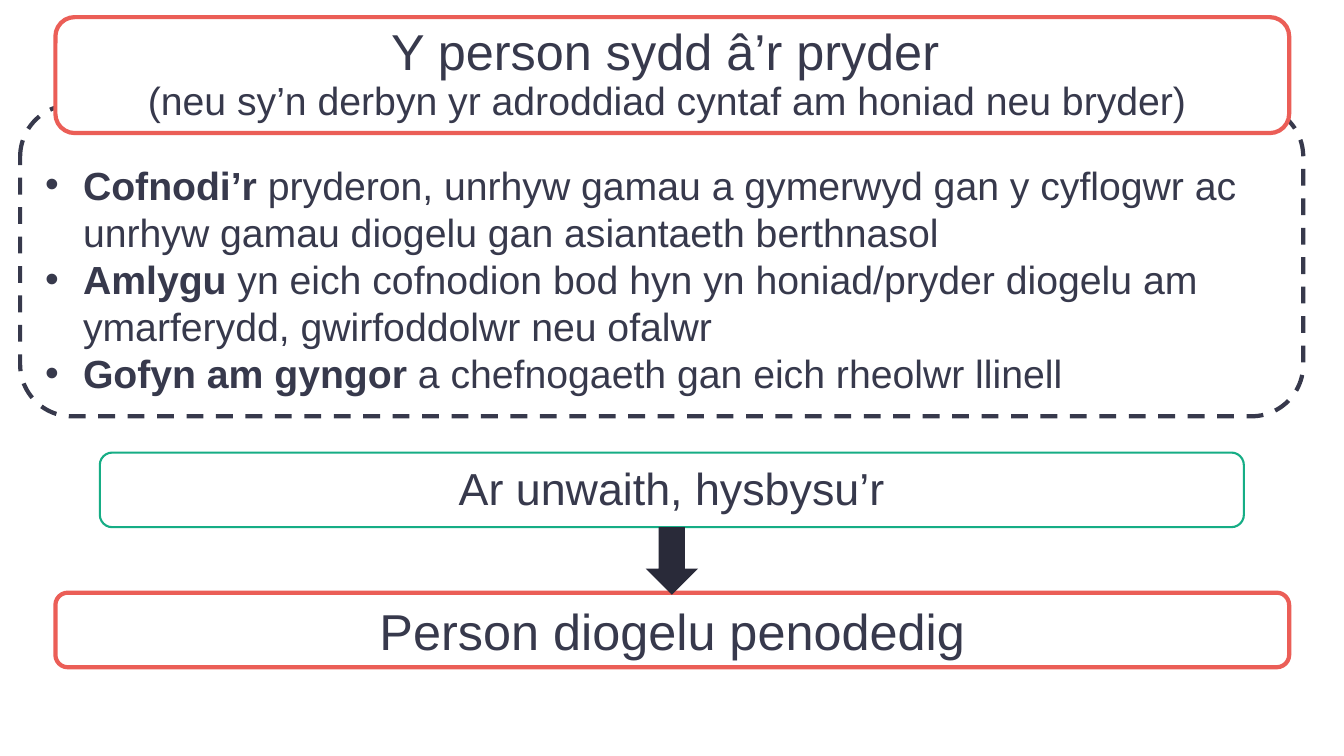
from lxml import etree
from pptx import Presentation
from pptx.dml.color import RGBColor
from pptx.enum.dml import MSO_LINE
from pptx.enum.shapes import MSO_SHAPE
from pptx.enum.text import MSO_ANCHOR, PP_ALIGN
from pptx.oxml.ns import qn
from pptx.util import Pt

ROUNDED, DOWN_ARROW = MSO_SHAPE.ROUNDED_RECTANGLE, MSO_SHAPE.DOWN_ARROW
TOP, MIDDLE, BOTTOM = MSO_ANCHOR.TOP, MSO_ANCHOR.MIDDLE, MSO_ANCHOR.BOTTOM
LEFT, CENTER = PP_ALIGN.LEFT, PP_ALIGN.CENTER
DASH = MSO_LINE.DASH

COLORS = {"ink": "37394C", "red": "EB5E57", "green": "16AD85",
          "arrow": "292A39", "white": "FFFFFF"}

WIDTH, HEIGHT = 960, 540
PERSON_BOX = (39.6, 12.24, 881.28, 82.8)
DUTIES_BOX = (14.4, 74.88, 916.56, 222.48)
INFORM_BOX = (71.28, 323.28, 817.2, 53.28)
LEAD_BOX = (39.6, 423.36, 881.28, 53.28)
ARROW_WIDTH, ARROW_OVERLAP = 37.44, 1.5
BULLET_INDENT = 27

DUTIES = [
    ("Cofnodi’r ", "pryderon, unrhyw gamau a gymerwyd gan y cyflogwr ac "
                   "unrhyw gamau diogelu gan asiantaeth berthnasol"),
    ("Amlygu ", "yn eich cofnodion bod hyn yn honiad/pryder diogelu am "
                "ymarferydd, gwirfoddolwr neu ofalwr"),
    ("Gofyn am gyngor ", "a chefnogaeth gan eich rheolwr llinell"),
]


def color(name):
    """Return the palette colour of that name."""
    return RGBColor.from_string(COLORS[name])


def add_shape(slide, kind, box, fill=None, line=None, width=3, dash=None):
    """Draw a preset shape in a box, without shadow."""
    shape = slide.shapes.add_shape(kind, *(Pt(length) for length in box))
    shape.shadow.inherit = False
    if fill:
        shape.fill.solid()
        shape.fill.fore_color.rgb = color(fill)
    else:
        shape.fill.background()
    if line:
        shape.line.color.rgb = color(line)
        shape.line.width = Pt(width)
        if dash:
            shape.line.dash_style = dash
    else:
        shape.line.fill.background()
    return shape


def add_text(paragraph, text, size=28, bold=False, align=CENTER):
    """Append a formatted run to a paragraph."""
    paragraph.alignment = align
    run = paragraph.add_run()
    run.text = text
    run.font.name = "Arial"
    run.font.size = Pt(size)
    run.font.bold = bold
    run.font.color.rgb = color("ink")


def add_bullet(paragraph):
    """Give a paragraph a hanging bullet."""
    properties = paragraph._p.get_or_add_pPr()
    properties.set("marL", str(Pt(BULLET_INDENT)))
    properties.set("indent", str(-Pt(BULLET_INDENT)))
    bullet_color = etree.SubElement(properties, qn("a:buClr"))
    etree.SubElement(bullet_color, qn("a:srgbClr"), val=COLORS["ink"])
    etree.SubElement(properties, qn("a:buFont"), typeface="Arial")
    etree.SubElement(properties, qn("a:buChar"), char="•")


def add_step(slide, box, lines, line, width=3, anchor=MIDDLE, spacing=None):
    """Draw a rounded step with centred lines of (text, size)."""
    frame = add_shape(slide, ROUNDED, box, "white", line, width).text_frame
    frame.word_wrap = True
    frame.vertical_anchor = anchor
    paragraph = frame.paragraphs[0]
    if spacing:
        paragraph.line_spacing = spacing
    for index, (text, size) in enumerate(lines):
        if index:
            paragraph.add_line_break()
        add_text(paragraph, text, size=size)


def add_duties(slide, box):
    """Draw the dashed panel with its bulleted duties."""
    frame = add_shape(slide, ROUNDED, box, line="ink", dash=DASH).text_frame
    frame.word_wrap = True
    frame.vertical_anchor = BOTTOM
    for index, (action, detail) in enumerate(DUTIES):
        paragraph = frame.add_paragraph() if index else frame.paragraphs[0]
        add_bullet(paragraph)
        add_text(paragraph, action, bold=True, align=LEFT)
        add_text(paragraph, detail, align=LEFT)


def add_arrow(slide, upper, lower):
    """Join two stacked boxes with a block arrow."""
    left, top, width, height = upper
    start = top + height
    center = left + width / 2
    add_shape(slide, DOWN_ARROW,
              (center - ARROW_WIDTH / 2, start, ARROW_WIDTH,
               lower[1] + ARROW_OVERLAP - start), "arrow")


def main():
    """Build and save the slide."""
    deck = Presentation()
    deck.slide_width, deck.slide_height = Pt(WIDTH), Pt(HEIGHT)
    slide = deck.slides.add_slide(deck.slide_layouts[6])
    add_step(slide, LEAD_BOX, [("Person diogelu penodedig", 36)], "red")
    add_duties(slide, DUTIES_BOX)
    add_step(slide, PERSON_BOX,
             [("Y person sydd â’r pryder ", 36),
              ("(neu sy’n derbyn yr adroddiad cyntaf am honiad neu bryder) ", 28)],
             "red", spacing=0.9)
    add_step(slide, INFORM_BOX, [("Ar unwaith, hysbysu’r", 32)], "green",
             width=1.5, anchor=TOP)
    add_arrow(slide, INFORM_BOX, LEAD_BOX)
    deck.save("out.pptx")


if __name__ == "__main__":
    main()
